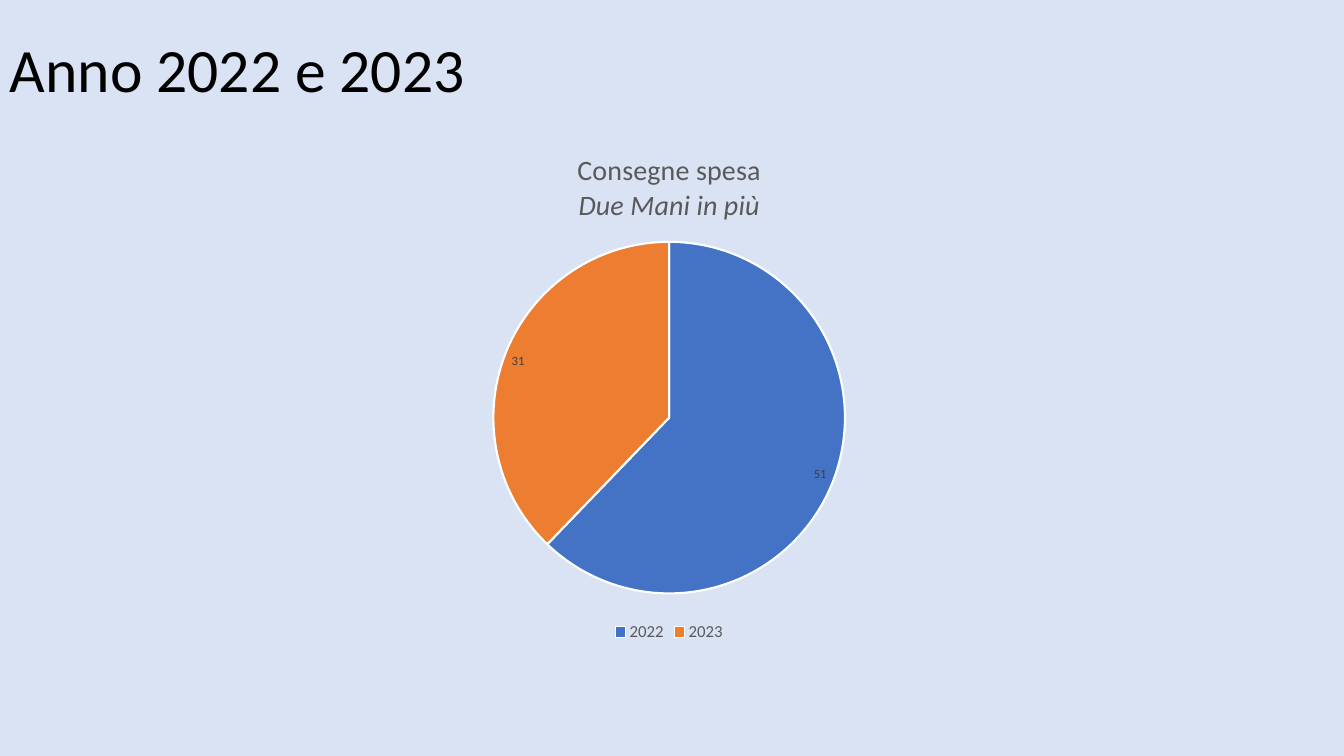
from lxml.etree import SubElement
from pptx import Presentation
from pptx.chart.data import CategoryChartData
from pptx.dml.color import RGBColor
from pptx.enum.chart import XL_CHART_TYPE, XL_LABEL_POSITION, XL_LEGEND_POSITION
from pptx.enum.text import MSO_ANCHOR
from pptx.oxml.ns import qn
from pptx.util import Cm, Pt

COLORS = {
    "background": "DAE3F3",
    "title": "000000",
    "chart_text": "595959",
    "label": "404040",
    "border": "FFFFFF",
    "2022": "4472C4",
    "2023": "ED7D31",
}


class SlideBuilder:
    def __init__(self, presentation, font_name):
        self.font_name = font_name
        self.slide = presentation.slides.add_slide(presentation.slide_layouts[6])
        fill = self.slide.background.fill
        fill.solid()
        fill.fore_color.rgb = self.color("background")

    def color(self, name):
        return RGBColor.from_string(COLORS[name])

    def style(self, font, size, color, italic=False):
        font.name = self.font_name
        font.size = Pt(size)
        font.bold = False
        font.italic = italic
        font.color.rgb = self.color(color)

    def add_run(self, paragraph, text, size, color, italic=False):
        run = paragraph.add_run()
        run.text = text
        self.style(run.font, size, color, italic)

    def add_title(self, text, left, top, width, height):
        box = self.slide.shapes.add_textbox(Cm(left), Cm(top), Cm(width), Cm(height))
        frame = box.text_frame
        frame.word_wrap = True
        frame.vertical_anchor = MSO_ANCHOR.MIDDLE
        paragraph = frame.paragraphs[0]
        paragraph.line_spacing = 0.9
        self.add_run(paragraph, text, 44, "title")

    def add_pie(self, title_lines, values, left, top, width, height):
        data = CategoryChartData()
        data.categories = list(values)
        data.add_series("Consegne spesa", list(values.values()))
        chart = self.slide.shapes.add_chart(
            XL_CHART_TYPE.PIE, Cm(left), Cm(top), Cm(width), Cm(height), data
        ).chart
        self.style(chart.font, 10, "title")
        self.add_chart_title(chart, title_lines)

        chart.has_legend = True
        chart.legend.position = XL_LEGEND_POSITION.BOTTOM
        chart.legend.include_in_layout = False
        self.style(chart.legend.font, 12, "chart_text")

        plot = chart.plots[0]
        plot.vary_by_categories = True
        for index, year in enumerate(values):
            point_format = plot.series[0].points[index].format
            point_format.fill.solid()
            point_format.fill.fore_color.rgb = self.color(year)
            point_format.line.color.rgb = self.color("border")
            point_format.line.width = Pt(1.5)

        labels = plot.series[0].data_labels
        labels.show_value = True
        labels.position = XL_LABEL_POSITION.INSIDE_END
        self.style(labels.font, 9, "label")
        return chart

    def add_chart_title(self, chart, title_lines):
        chart.has_title = True
        chart.chart_title.include_in_layout = False
        frame = chart.chart_title.text_frame
        for index, (text, italic) in enumerate(title_lines):
            paragraph = frame.add_paragraph() if index else frame.paragraphs[0]
            self.add_run(paragraph, text, 20, "chart_text", italic)

    def place_plot(self, chart, x, y, w, h):
        plot_area = chart.plots[0]._element.getparent()
        layout = plot_area.find(qn("c:layout"))
        if layout is None:
            layout = SubElement(plot_area, qn("c:layout"))
            plot_area.insert(0, layout)
        manual = SubElement(layout, qn("c:manualLayout"))
        settings = {"layoutTarget": "inner", "xMode": "edge", "yMode": "edge",
                    "x": x, "y": y, "w": w, "h": h}
        for name, value in settings.items():
            SubElement(manual, qn(f"c:{name}")).set("val", str(value))


def main():
    presentation = Presentation()
    presentation.slide_width = Cm(33.87)
    presentation.slide_height = Cm(19.05)
    builder = SlideBuilder(presentation, "Calibri")
    builder.add_title("Anno 2022 e 2023", 0, 0, 29.2, 3.68)
    chart = builder.add_pie(
        [("Consegne spesa", False), ("Due Mani in più", True)],
        {"2022": 51, "2023": 31},
        3.02, 3.35, 27.69, 12.93,
    )
    builder.place_plot(chart, 0.34, 0.21, 0.32, 0.69)
    presentation.save("out.pptx")


if __name__ == "__main__":
    main()
